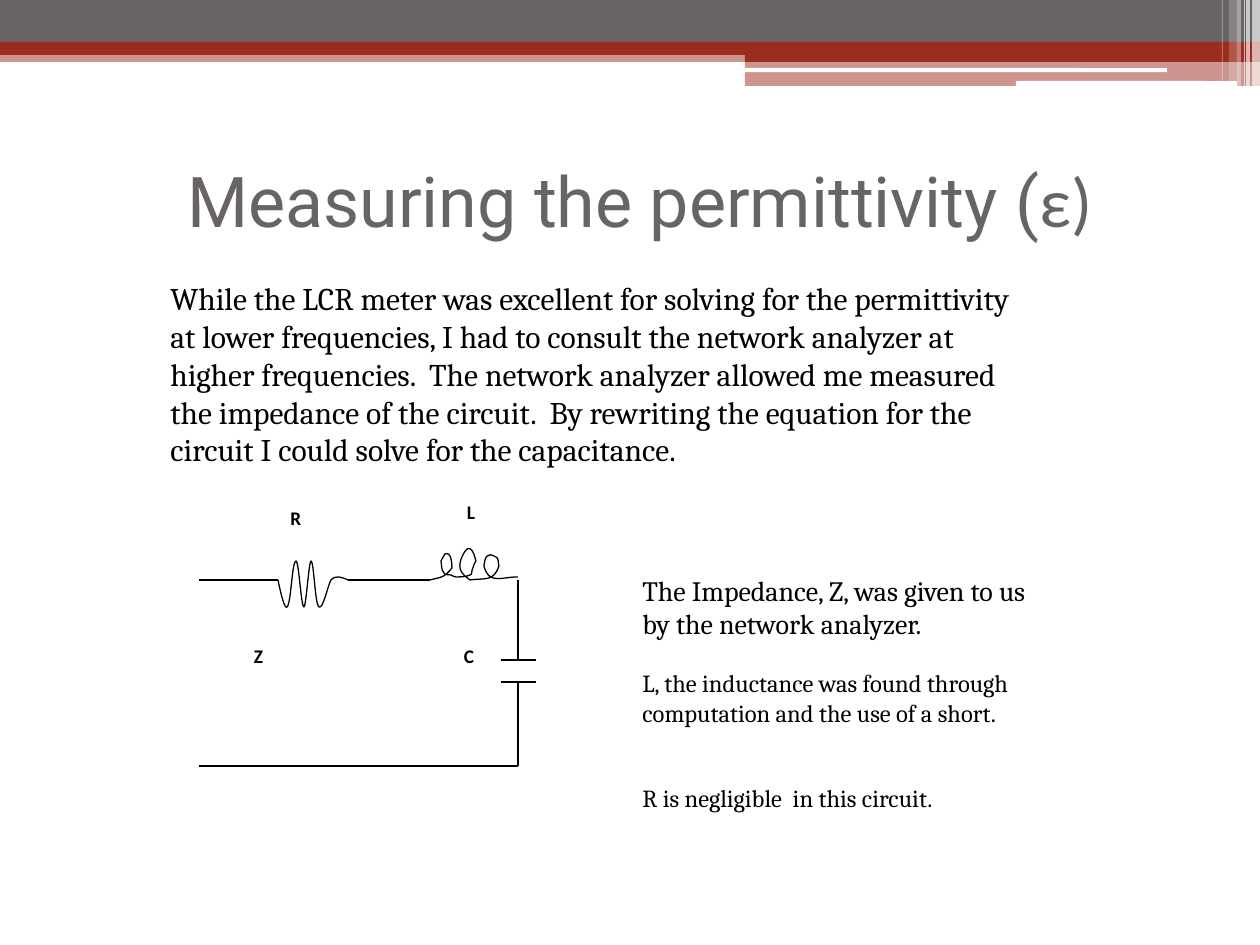
"""Build the slide on measuring permittivity with an LCR circuit."""
from pptx import Presentation
from pptx.dml.color import RGBColor
from pptx.enum.shapes import MSO_CONNECTOR, MSO_SHAPE
from pptx.enum.text import MSO_ANCHOR, MSO_AUTO_SIZE, PP_ALIGN
from pptx.oxml import parse_xml
from pptx.oxml.ns import nsdecls, qn
from pptx.util import Inches, Pt

PX = Inches(1) / 126
GREY = RGBColor(0x69, 0x64, 0x64)
RED = RGBColor(0x9B, 0x2D, 0x1F)
WHITE = RGBColor(255, 255, 255)
BLACK = RGBColor(0, 0, 0)


def emu(*sizes):
    return [round(size * PX) for size in sizes]


def block(kind, box, color, alpha=100):
    shape = shapes.add_shape(kind, *emu(*box))
    shape.shadow.inherit = False
    shape.line.fill.background()
    shape.fill.solid()
    shape.fill.fore_color.rgb = color
    if alpha < 100:
        tint = next(shape._element.iter(qn("a:srgbClr")))
        tint.append(parse_xml(f'<a:alpha {nsdecls("a")} val="{alpha * 1000}"/>'))
    return shape


deck = Presentation()
deck.slide_width, deck.slide_height = emu(1260, 945)
slide = deck.slides.add_slide(deck.slide_layouts[5])
shapes = slide.shapes

bands = [
    ((0, 50, 1260, 12), RED, 50),
    ((0, 0, 1260, 42), GREY, 100),
    ((0, 42, 1260, 13), RED, 100),
    ((745, 49, 515, 13), RED, 100),
    ((745, 61, 515, 25), RED, 50),
]
for box, color, alpha in bands:
    block(MSO_SHAPE.RECTANGLE, box, color, alpha)
for box in [(745, 68, 422, 4), (1016, 81, 221, 5)]:
    block(MSO_SHAPE.ROUNDED_RECTANGLE, box, WHITE)
stripes = [
    (1252, 8, 86, 65), (1246, 4, 86, 65), (1244, 1, 86, 60),
    (1237, 4, 86, 40), (1229, 8, 81, 20), (1222, 1, 81, 30),
]
for left, width, height, alpha in stripes:
    block(MSO_SHAPE.RECTANGLE, (left, 0, width, height), WHITE, alpha)

title = shapes.title
title.left, title.top, title.width, title.height = emu(73, 126, 1134, 147)
title.text_frame.vertical_anchor = MSO_ANCHOR.MIDDLE
para = title.text_frame.paragraphs[0]
para.alignment = PP_ALIGN.CENTER
para.font.size = Pt(40)
para.font.color.rgb = GREY
for words, face in [("Measuring the permittivity (", "Roboto"), ("ε)", "Calibri")]:
    run = para.add_run()
    run.text = words
    run.font.name = face

notes = [
    ((158, 273, 892, 204), 18,
     "While the LCR meter was excellent for solving for the permittivity at "
     "lower frequencies, I had to consult the network analyzer at higher "
     "frequencies.  The network analyzer allowed me measured the impedance of "
     "the circuit.  By rewriting the equation for the circuit I could solve "
     "for the capacitance."),
    ((630, 567, 420, 81), 16,
     "The Impedance, Z, was given to us by the network analyzer."),
    ((630, 662, 420, 102), 14,
     "L, the inductance was found through computation and the use of a short."),
    ((630, 777, 410, 43), 14, "R is negligible  in this circuit."),
]
for box, size, words in notes:
    frame = shapes.add_textbox(*emu(*box)).text_frame
    frame.word_wrap = True
    frame.auto_size = MSO_AUTO_SIZE.SHAPE_TO_FIT_TEXT
    para = frame.paragraphs[0]
    para.text = words
    para.font.name = "Cambria"
    para.font.size = Pt(size)
    para.font.color.rgb = BLACK

labels = [
    ("R", (278, 500, 57, 60), PP_ALIGN.LEFT),
    ("L", (440, 494, 62, 55), PP_ALIGN.CENTER),
    ("C", (440, 638, 58, 55), PP_ALIGN.CENTER),
    ("Z", (224, 638, 69, 55), PP_ALIGN.CENTER),
]
for name, box, align in labels:
    frame = block(MSO_SHAPE.RECTANGLE, box, WHITE).text_frame
    frame.vertical_anchor = MSO_ANCHOR.TOP
    para = frame.paragraphs[0]
    para.text = name
    para.alignment = align
    para.space_after = Pt(10)
    para.font.name = "Calibri"
    para.font.size = Pt(11)
    para.font.bold = True
    para.font.color.rgb = BLACK

wires = [
    (518, 580, 518, 660), (199, 580, 278, 580), (348, 580, 430, 580),
    (501, 660, 536, 660), (501, 682, 536, 682),
    (518, 682, 518, 766), (518, 766, 199, 766),
]
for ends in wires:
    wire = shapes.add_connector(MSO_CONNECTOR.STRAIGHT, *emu(*ends))
    wire.line.color.rgb = BLACK
    wire.line.width = Pt(0.75)
    wire._element.spPr.append(parse_xml(f'<a:effectLst {nsdecls("a")}/>'))

zigzag = [
    (278, 580), (281, 595), (285, 610), (287, 607),
    (291, 605), (292, 561), (296, 561), (299, 561), (301, 607), (304, 607),
    (306, 607), (309, 561), (311, 561), (314, 561), (315, 605), (319, 607),
    (323, 610), (328, 585), (331, 580), (336, 575), (341, 577), (348, 580),
]
coil = [
    (430, 580), (442, 577), (444, 578), (452, 568),
    (452, 566), (452, 551), (445, 554), (444, 556), (442, 559), (441, 561),
    (442, 564), (441, 570), (444, 573), (445, 575), (449, 575), (451, 575),
    (452, 576), (455, 577), (456, 577), (461, 577), (466, 577), (470, 575),
    (473, 575), (471, 571), (473, 568), (473, 566), (475, 563), (476, 561),
    (475, 558), (471, 537), (462, 557), (456, 571), (464, 575), (470, 580),
    (485, 578), (494, 582), (499, 566), (498, 563), (499, 558), (496, 557),
    (486, 551), (485, 559), (484, 566), (489, 585), (501, 577), (518, 577),
]
for dots in (zigzag, coil):
    pen = shapes.build_freeform(*dots[0], scale=PX)
    pen.add_line_segments(dots[1:], close=False)
    curve = pen.convert_to_shape()
    curve.shadow.inherit = False
    curve.fill.background()
    curve.line.color.rgb = BLACK
    curve.line.width = Pt(0.75)
    steps = list(curve._element.iter(qn("a:lnTo")))
    for first, second, third in zip(steps[::3], steps[1::3], steps[2::3]):
        first.tag = qn("a:cubicBezTo")
        for step in (second, third):
            first.append(step[0])
            step.getparent().remove(step)

deck.save("out.pptx")
